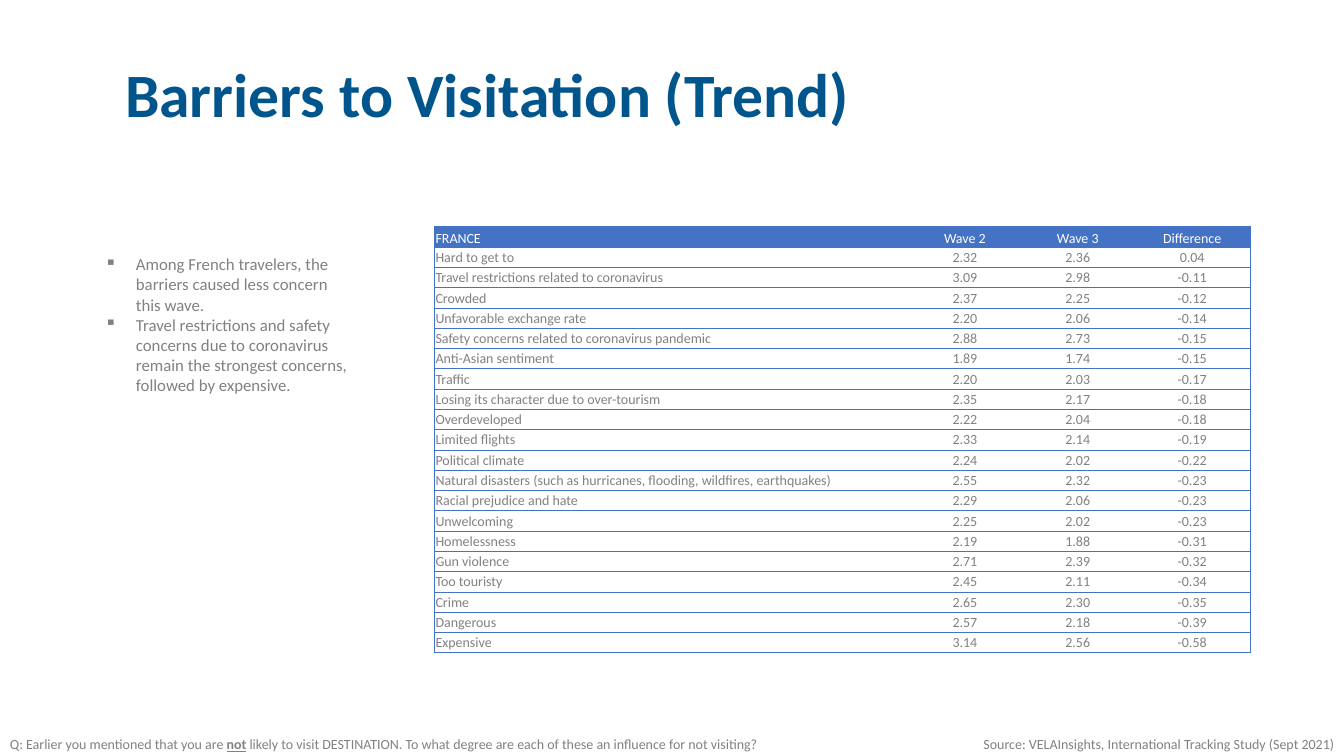
"""Build the slide on barriers to visitation, with its trend table."""
from lxml import etree
from pptx import Presentation
from pptx.dml.color import RGBColor
from pptx.enum.text import MSO_ANCHOR, MSO_AUTO_SIZE, PP_ALIGN
from pptx.oxml.ns import qn
from pptx.util import Inches, Pt

NAVY = RGBColor(0x00, 0x55, 0x8C)
BLUE = RGBColor(0x44, 0x72, 0xC4)
GREY = RGBColor(0x80, 0x81, 0x80)
WHITE = RGBColor(0xFF, 0xFF, 0xFF)
LEFT, CENTER, RIGHT = PP_ALIGN.LEFT, PP_ALIGN.CENTER, PP_ALIGN.RIGHT
TOP, MIDDLE, BOTTOM = MSO_ANCHOR.TOP, MSO_ANCHOR.MIDDLE, MSO_ANCHOR.BOTTOM
FIXED = MSO_AUTO_SIZE.NONE

POINTS = [
    "Among French travelers, the barriers caused less concern this wave.",
    "Travel restrictions and safety concerns due to coronavirus remain "
    "the strongest concerns, followed by expensive.",
]
ROWS = [
    ("FRANCE", "Wave 2", "Wave 3", "Difference"),
    ("Hard to get to", "2.32", "2.36", "0.04"),
    ("Travel restrictions related to coronavirus", "3.09", "2.98", "-0.11"),
    ("Crowded", "2.37", "2.25", "-0.12"),
    ("Unfavorable exchange rate", "2.20", "2.06", "-0.14"),
    ("Safety concerns related to coronavirus pandemic", "2.88", "2.73", "-0.15"),
    ("Anti-Asian sentiment", "1.89", "1.74", "-0.15"),
    ("Traffic", "2.20", "2.03", "-0.17"),
    ("Losing its character due to over-tourism", "2.35", "2.17", "-0.18"),
    ("Overdeveloped", "2.22", "2.04", "-0.18"),
    ("Limited flights", "2.33", "2.14", "-0.19"),
    ("Political climate", "2.24", "2.02", "-0.22"),
    ("Natural disasters (such as hurricanes, flooding, wildfires, earthquakes)",
     "2.55", "2.32", "-0.23"),
    ("Racial prejudice and hate", "2.29", "2.06", "-0.23"),
    ("Unwelcoming", "2.25", "2.02", "-0.23"),
    ("Homelessness", "2.19", "1.88", "-0.31"),
    ("Gun violence", "2.71", "2.39", "-0.32"),
    ("Too touristy", "2.45", "2.11", "-0.34"),
    ("Crime", "2.65", "2.30", "-0.35"),
    ("Dangerous", "2.57", "2.18", "-0.39"),
    ("Expensive", "3.14", "2.56", "-0.58"),
]
WIDTHS = [4.7, 1.12, 1.12, 1.15]
NOTES = [
    ((7.4, 7.25, 5.93, 0.27), RIGHT,
     ["Source: VELAInsights, International Tracking Study (Sept 2021)"]),
    ((0, 7.25, 8.9, 0.44), LEFT,
     ["Q: Earlier you mentioned that you are ", "not",
      " likely to visit DESTINATION. To what degree are each of these "
      "an influence for not visiting?"]),
]


def add_run(para, text, size, color, **extra):
    run = para.add_run()
    run.text = text
    run.font.color.rgb = color
    form = {"name": "Calibri", "size": Pt(size), "bold": False, **extra}
    for key, value in form.items():
        setattr(run.font, key, value)


def add_edge(cell, side, shown):
    line = etree.SubElement(cell._tc.get_or_add_tcPr(), qn(f"a:ln{side}"),
                            w=str(Pt(0.5)))
    if shown:
        fill = etree.SubElement(line, qn("a:solidFill"))
        etree.SubElement(fill, qn("a:srgbClr"), val=str(BLUE))
    else:
        etree.SubElement(line, qn("a:noFill"))


deck = Presentation()
deck.slide_width, deck.slide_height = Inches(13.33), Inches(7.5)
slide = deck.slides.add_slide(deck.slide_layouts[5])
slide.background.fill.solid()
slide.background.fill.fore_color.rgb = WHITE

title = slide.shapes.title
place = {"left": 1.14, "top": 0.54, "width": 10.78, "height": 1.97}
for key, value in place.items():
    setattr(title, key, Inches(value))
title.text_frame.auto_size = FIXED
title.text_frame.vertical_anchor = TOP
para = title.text_frame.paragraphs[0]
form = {"alignment": LEFT, "line_spacing": Pt(50), "space_before": Pt(10)}
for key, value in form.items():
    setattr(para, key, value)
add_run(para, "Barriers to Visitation (Trend)", 44, NAVY, bold=True)

box = slide.shapes.add_textbox(*map(Inches, (0.94, 2.47, 2.63, 1.72)))
frame = box.text_frame
frame.word_wrap = True
for i, point in enumerate(POINTS):
    para = frame.add_paragraph() if i else frame.paragraphs[0]
    props = para._p.get_or_add_pPr()
    props.set("marL", str(Inches(0.31)))
    props.set("indent", str(Inches(-0.31)))
    etree.SubElement(props, qn("a:buChar"), char="▪")
    add_run(para, point, 12, GREY)

grid = slide.shapes.add_table(len(ROWS), len(WIDTHS),
                              *map(Inches, (4.31, 2.25, 8.09, 4.23))).table
grid.horz_banding = False
for col, width in zip(grid.columns, WIDTHS):
    col.width = Inches(width)
last = len(WIDTHS) - 1
for r, row in enumerate(ROWS):
    for c, text in enumerate(row):
        cell = grid.cell(r, c)
        form = {"margin_left": Inches(0.01), "margin_right": Inches(0.01),
                "margin_top": Inches(0.01), "margin_bottom": 0,
                "vertical_anchor": MIDDLE if r else BOTTOM}
        for key, value in form.items():
            setattr(cell, key, value)
        edges = {"L": c == 0, "R": c == last, "T": True, "B": True}
        for side, shown in edges.items():
            add_edge(cell, side, shown)
        if r:
            cell.fill.background()
        else:
            cell.fill.solid()
            cell.fill.fore_color.rgb = BLUE
        para = cell.text_frame.paragraphs[0]
        para.alignment = CENTER if c else LEFT
        add_run(para, text, 10, GREY if r else WHITE)

for place, align, parts in NOTES:
    frame = slide.shapes.add_textbox(*map(Inches, place)).text_frame
    frame.word_wrap = True
    para = frame.paragraphs[0]
    para.alignment = align
    for part in parts:
        strong = part == "not"
        add_run(para, part, 10, GREY, bold=strong, underline=strong)

deck.save("out.pptx")
